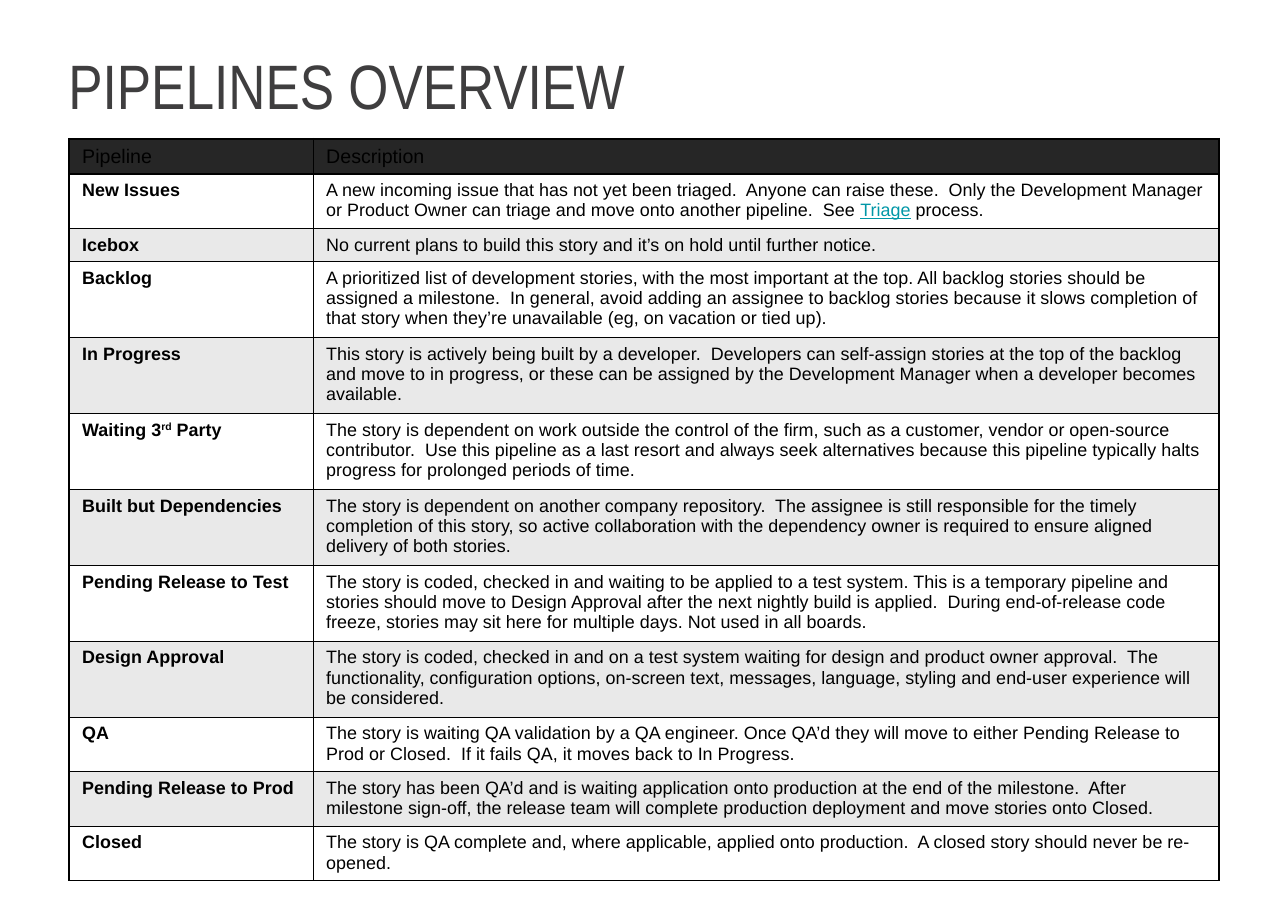
from lxml import etree
from pptx import Presentation
from pptx.dml.color import RGBColor
from pptx.enum.text import MSO_ANCHOR
from pptx.oxml.ns import qn
from pptx.util import Pt

TOP = MSO_ANCHOR.TOP
COLORS = {
    "title": "3F3E3F",
    "text": "000000",
    "border": "000000",
    "header": "262626",
    "odd": "FFFFFF",
    "even": "E9E9E9",
    "link": "0097A7",
}
FONT, TITLE_FONT = "Arial", "Arial Narrow"
HEADER_SIZE, BODY_SIZE = 12.8, 11.7
COL_WIDTHS = (159.5, 592)
HEADER_HEIGHT = 23
LINE_HEIGHTS = {1: 21.6, 2: 35.6, 3: 49.65}
OUTER, INNER = 1.5, 0.75

HEADINGS = ("Pipeline", "Description")
# Name, description, lines in the description; a (text, style) pair is a styled run
PIPELINES = [
    (["New Issues"],
     ["A new incoming issue that has not yet been triaged.  Anyone can raise these.  Only the Development "
      "Manager or Product Owner can triage and move onto another pipeline.  See ",
      ("Triage", "link"), " process."], 2),
    (["Icebox"],
     ["No current plans to build this story and it’s on hold until further notice."], 1),
    (["Backlog"],
     ["A prioritized list of development stories, with the most important at the top. All backlog stories "
      "should be assigned a milestone.  In general, avoid adding an assignee to backlog stories because it "
      "slows completion of that story when they’re unavailable (eg, on vacation or tied up)."], 3),
    (["In Progress"],
     ["This story is actively being built by a developer.  Developers can self-assign stories at the top of "
      "the backlog and move to in progress, or these can be assigned by the Development Manager when a "
      "developer becomes available."], 3),
    (["Waiting 3", ("rd", "super"), " Party"],
     ["The story is dependent on work outside the control of the firm, such as a customer, vendor or "
      "open-source contributor.  Use this pipeline as a last resort and always seek alternatives because "
      "this pipeline typically halts progress for prolonged periods of time."], 3),
    (["Built but Dependencies"],
     ["The story is dependent on another company repository.  The assignee is still responsible for the "
      "timely completion of this story, so active collaboration with the dependency owner is required to "
      "ensure aligned delivery of both stories."], 3),
    (["Pending Release to Test"],
     ["The story is coded, checked in and waiting to be applied to a test system. This is a temporary "
      "pipeline and stories should move to Design Approval after the next nightly build is applied.  During "
      "end-of-release code freeze, stories may sit here for multiple days. Not used in all boards."], 3),
    (["Design Approval"],
     ["The story is coded, checked in and on a test system waiting for design and product owner approval.  "
      "The functionality, configuration options, on-screen text, messages, language, styling and end-user "
      "experience will be considered."], 3),
    (["QA"],
     ["The story is waiting QA validation by a QA engineer. Once QA’d they will move to either Pending "
      "Release to Prod or Closed.  If it fails QA, it moves back to In Progress."], 2),
    (["Pending Release to Prod"],
     ["The story has been QA’d and is waiting application onto production at the end of the milestone.  "
      "After milestone sign-off, the release team will complete production deployment and move stories onto "
      "Closed."], 2),
    (["Closed"],
     ["The story is QA complete and, where applicable, applied onto production.  A closed story should never "
      "be re-opened."], 2),
]


def rgb(name):
    return RGBColor.from_string(COLORS[name])


def set_font(font, name, size, color, bold=False):
    font.name, font.size, font.bold = name, Pt(size), bold
    font.color.rgb = rgb(color)


def set_margins(obj, x, y):
    obj.margin_left = obj.margin_right = Pt(x)
    obj.margin_top = obj.margin_bottom = Pt(y)


def set_borders(cell, widths):
    """Draw the left, right, top and bottom borders; call before filling the cell."""
    tcPr = cell._tc.get_or_add_tcPr()
    for side, width in zip("LRTB", widths):
        ln = etree.SubElement(tcPr, qn(f"a:ln{side}"), w=str(Pt(width)))
        fill = etree.SubElement(ln, qn("a:solidFill"))
        etree.SubElement(fill, qn("a:srgbClr"), val=COLORS["border"])


def fill_cell(cell, parts, size, bold, background):
    cell.fill.solid()
    cell.fill.fore_color.rgb = rgb(background)
    cell.vertical_anchor = TOP
    set_margins(cell, 8.6, 4.2)
    p = cell.text_frame.paragraphs[0]
    for part in parts:
        text, style = (part, None) if isinstance(part, str) else part
        r = p.add_run()
        r.text = text
        set_font(r.font, FONT, size, "link" if style == "link" else "text", bold)
        if style == "link":
            r.font.underline = True
        elif style == "super":
            r.font._element.set("baseline", "30000")


def add_title(slide, left, top, width, height):
    tf = slide.shapes.add_textbox(Pt(left), Pt(top), Pt(width), Pt(height)).text_frame
    tf.word_wrap = True
    tf.vertical_anchor = TOP
    set_margins(tf, 9.4, 4.3)
    p = tf.paragraphs[0]
    p.text = "PIPELINES OVERVIEW"
    p.line_spacing = 0.9
    set_font(p.font, TITLE_FONT, 41, "title")


def add_pipeline_table(slide, left, top):
    rows = [([HEADINGS[0]], [HEADINGS[1]])] + [row[:2] for row in PIPELINES]
    heights = [HEADER_HEIGHT] + [LINE_HEIGHTS[row[2]] for row in PIPELINES]
    table = slide.shapes.add_table(len(rows), len(COL_WIDTHS), Pt(left), Pt(top),
                                   Pt(sum(COL_WIDTHS)), Pt(sum(heights))).table
    for column, width in zip(table.columns, COL_WIDTHS):
        column.width = Pt(width)
    for i, (cells, height) in enumerate(zip(rows, heights)):
        table.rows[i].height = Pt(height)
        header = i == 0
        background = "header" if header else ("even", "odd")[i % 2]
        for j, parts in enumerate(cells):
            cell = table.cell(i, j)
            set_borders(cell, (INNER if j else OUTER, OUTER if j else INNER,
                               OUTER if i < 2 else INNER, OUTER if header else INNER))
            fill_cell(cell, parts, HEADER_SIZE if header else BODY_SIZE,
                      not header and j == 0, background)


def main():
    prs = Presentation()
    prs.slide_width, prs.slide_height = Pt(841.7), Pt(595.4)
    slide = prs.slides.add_slide(prs.slide_layouts[6])
    add_pipeline_table(slide, 45.1, 90.7)
    add_title(slide, 35.3, 31.7, 624.2, 44.6)
    prs.save("out.pptx")


if __name__ == "__main__":
    main()
